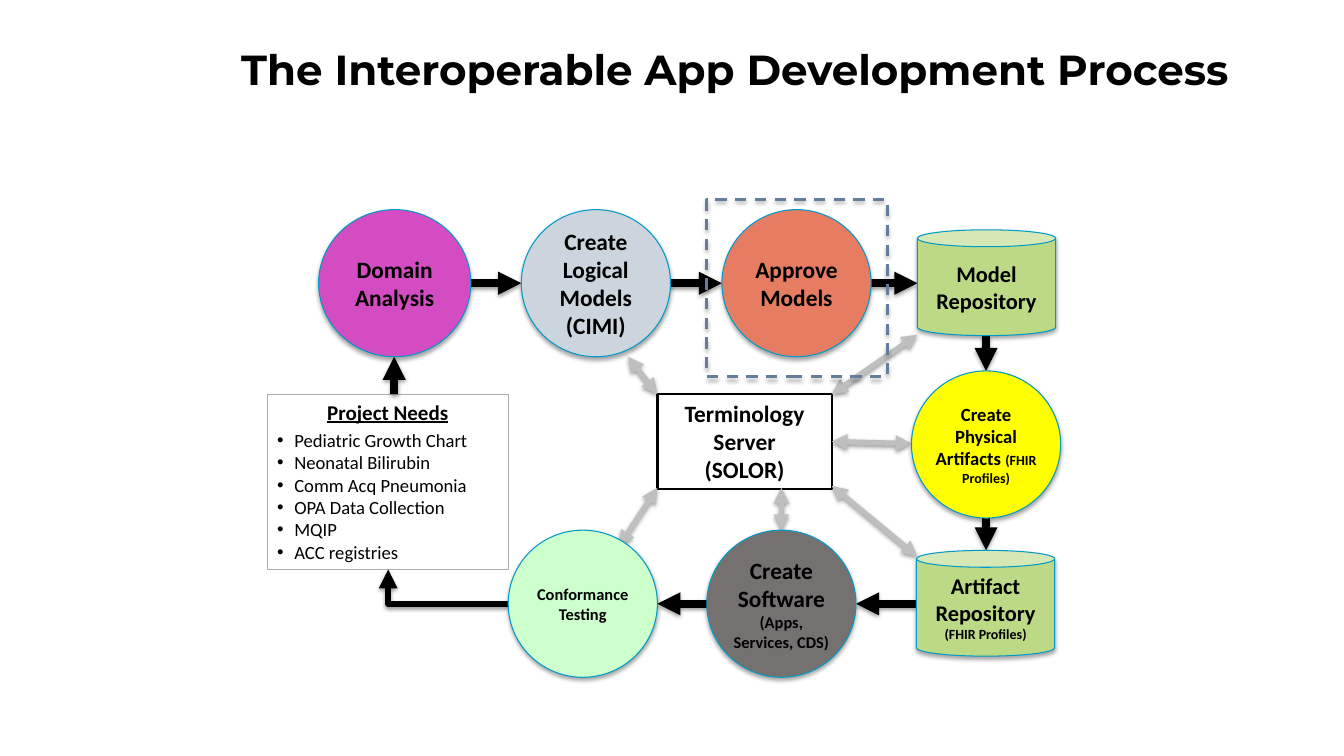
from lxml import etree
from pptx import Presentation
from pptx.dml.color import RGBColor
from pptx.enum import dml, shapes, text
from pptx.oxml import ns
from pptx.util import Inches, Pt

BLACK, GREY = "000000", "BFBFBF"


def rgb(value):
    return RGBColor.from_string(value)


def add_shadow(effects, distance, opacity):
    """Put a soft downward shadow into an effect list."""
    shadow = etree.SubElement(effects, ns.qn("a:outerShdw"), blurRad=str(Pt(3.1)),
                              dist=str(Pt(distance)), dir="5400000", rotWithShape="0")
    colour = etree.SubElement(shadow, ns.qn("a:srgbClr"), val=BLACK)
    etree.SubElement(colour, ns.qn("a:alpha"), val=str(opacity * 1000))


presentation = Presentation()
presentation.slide_width, presentation.slide_height = Inches(13.33), Inches(7.5)
slide = presentation.slides.add_slide(presentation.slide_layouts[6])

# Title
title = slide.shapes.add_textbox(Inches(2.08), Inches(-0.25), Inches(10.42), Inches(1.22))
frame = title.text_frame
frame.word_wrap = True
frame.vertical_anchor = text.MSO_ANCHOR.BOTTOM
frame.margin_left = frame.margin_right = Inches(0.08)
frame.margin_top = frame.margin_bottom = Inches(0.04)
paragraph = frame.paragraphs[0]
paragraph.text = "The Interoperable App Development Process"
paragraph.alignment = text.PP_ALIGN.CENTER
paragraph.font.name, paragraph.font.size, paragraph.font.bold = "Montserrat", Pt(30), True
paragraph.font.color.rgb = rgb(BLACK)

# Project needs and terminology server boxes
needs = ["Project Needs", "Pediatric Growth Chart", "Neonatal Bilirubin", "Comm Acq Pneumonia",
         "OPA Data Collection", "MQIP", "ACC registries"]
server = ["Terminology", "Server", "(SOLOR)"]
boxes = [
    (2.65, 3.91, 2.39, 1.74, "AFABAB", 0.75, needs),
    (6.52, 3.91, 1.73, 0.94, BLACK, 1.75, server),
]
for left, top, width, height, line_colour, line_width, lines in boxes:
    box = slide.shapes.add_textbox(Inches(left), Inches(top), Inches(width), Inches(height))
    box.line.color.rgb, box.line.width = rgb(line_colour), Pt(line_width)
    frame = box.text_frame
    frame.word_wrap = True
    for index, line in enumerate(lines):
        paragraph = frame.add_paragraph() if index else frame.paragraphs[0]
        paragraph.text = line
        is_heading = lines is needs and index == 0
        is_bullet = lines is needs and index > 0
        if is_bullet:
            properties = paragraph._p.get_or_add_pPr()
            properties.set("marL", str(Inches(0.17)))
            properties.set("indent", str(Inches(-0.17)))
            etree.SubElement(properties, ns.qn("a:buFont"), typeface="Arial")
            etree.SubElement(properties, ns.qn("a:buChar"), char="•")
        else:
            paragraph.alignment = text.PP_ALIGN.CENTER
        if is_heading:
            paragraph.space_after = Pt(3.3)
        font = paragraph.font
        font.name, font.color.rgb = "Calibri", rgb(BLACK)
        font.size = Pt(15 if is_heading else 13.3 if is_bullet else 16.7)
        font.bold, font.underline = not is_bullet, is_heading

# Arrows: start, end
flow_arrows = [
    ((4.67, 2.81), (5.17, 2.81)),
    ((6.64, 2.81), (7.16, 2.81)),
    ((8.64, 2.81), (9.1, 2.81)),
    ((9.78, 3.33), (9.78, 3.68)),
    ((9.78, 5.13), (9.78, 5.46)),
    ((9.09, 5.99), (8.49, 5.99)),
    ((7.01, 5.99), (6.52, 5.99)),
    ((3.91, 3.91), (3.91, 3.54)),
]
server_arrows = [
    ((6.23, 3.54), (6.52, 3.91)),
    ((9.1, 3.32), (8.25, 3.91)),
    ((9.04, 4.4), (8.25, 4.38)),
    ((9.1, 5.52), (8.25, 4.82)),
    ((7.75, 4.84), (7.75, 5.26)),
    ((6.52, 4.84), (6.14, 5.42)),
]
feedback_arrow = ((3.85, 5.65), (5.04, 5.99))
STRAIGHT, ELBOW = shapes.MSO_CONNECTOR.STRAIGHT, shapes.MSO_CONNECTOR.ELBOW
arrow_groups = [
    (flow_arrows, STRAIGHT, BLACK, 5.5, ["tailEnd"]),
    (server_arrows, STRAIGHT, GREY, 3.75, ["headEnd", "tailEnd"]),
    ([feedback_arrow], ELBOW, BLACK, 4.5, ["tailEnd"]),
]
for arrows, kind, colour, width, ends in arrow_groups:
    for start, end in arrows:
        arrow = slide.shapes.add_connector(kind, *map(Inches, start + end))
        arrow.line.color.rgb, arrow.line.width = rgb(colour), Pt(width)
        outline = arrow.line._get_or_add_ln()
        for arrowhead in ends:
            etree.SubElement(outline, ns.qn("a:" + arrowhead), type="triangle")
        properties = arrow._element.spPr
        if kind == ELBOW:
            # One bend, turned half round so that it runs left and then up
            properties.find(ns.qn("a:prstGeom")).set("prst", "bentConnector2")
            properties.find(ns.qn("a:xfrm")).set("rot", "10800000")
        add_shadow(etree.SubElement(properties, ns.qn("a:effectLst")), 1.6, 38)

# Process steps: left, top, width, fill, text runs with sizes
CIRCLE, CAN = shapes.MSO_SHAPE.OVAL, shapes.MSO_SHAPE.CAN
steps = [
    (CIRCLE, 3.16, 2.08, 1.51, "D44CC1", [("Domain Analysis", 16.7)]),
    (CIRCLE, 5.17, 2.08, 1.48, "CCD4DE", [("Create Logical Models (CIMI)", 16.7)]),
    (CIRCLE, 7.16, 2.08, 1.48, "E67D62", [("Approve Models", 16.7)]),
    (CAN, 9.1, 2.28, 1.37, "BCD986", [("Model Repository", 16)]),
    (CIRCLE, 9.04, 3.68, 1.48, "FFFF00",
     [("Create Physical Artifacts ", 13.3), ("(FHIR Profiles)", 10)]),
    (CAN, 9.09, 5.46, 1.37, "BCD986", [("Artifact Repository ", 16), ("(FHIR Profiles)", 10)]),
    (CIRCLE, 7.01, 5.26, 1.48, "767171",
     [("Create Software ", 16.7), ("(Apps, Services, CDS)", 11.7)]),
    (CIRCLE, 5.04, 5.26, 1.48, "CCFFCC", [("Conformance Testing", 11.7)]),
]
for kind, left, top, width, fill, runs in steps:
    height = 1.46 if kind == CIRCLE else 1.05
    step = slide.shapes.add_shape(kind, Inches(left), Inches(top), Inches(width), Inches(height))
    step.fill.solid()
    step.fill.fore_color.rgb = rgb(fill)
    step.line.color.rgb, step.line.width = rgb("0099C8"), Pt(0.75)
    step.shadow.inherit = False
    add_shadow(step._element.spPr.find(ns.qn("a:effectLst")), 1.8, 35)
    frame = step.text_frame
    frame.word_wrap = True
    frame.vertical_anchor = text.MSO_ANCHOR.MIDDLE
    if kind == CAN:
        step.adjustments[0] = 0.16
    else:
        frame.margin_left = frame.margin_right = frame.margin_top = frame.margin_bottom = 0
    paragraph = frame.paragraphs[0]
    paragraph.alignment = text.PP_ALIGN.CENTER
    paragraph.font.name, paragraph.font.bold = "Calibri", True
    paragraph.font.color.rgb = rgb(BLACK)
    for words, size in runs:
        run = paragraph.add_run()
        run.text, run.font.size = words, Pt(size)

# Dashed frame around the approval step
approval = slide.shapes.add_shape(shapes.MSO_SHAPE.RECTANGLE, Inches(7.01), Inches(1.98),
                                  Inches(1.79), Inches(1.76))
approval.fill.background()
approval.line.color.rgb, approval.line.width = rgb("657D9D"), Pt(2)
approval.line.dash_style = dml.MSO_LINE.DASH
approval.shadow.inherit = False
add_shadow(approval._element.spPr.find(ns.qn("a:effectLst")), 1.8, 35)

presentation.save("out.pptx")
